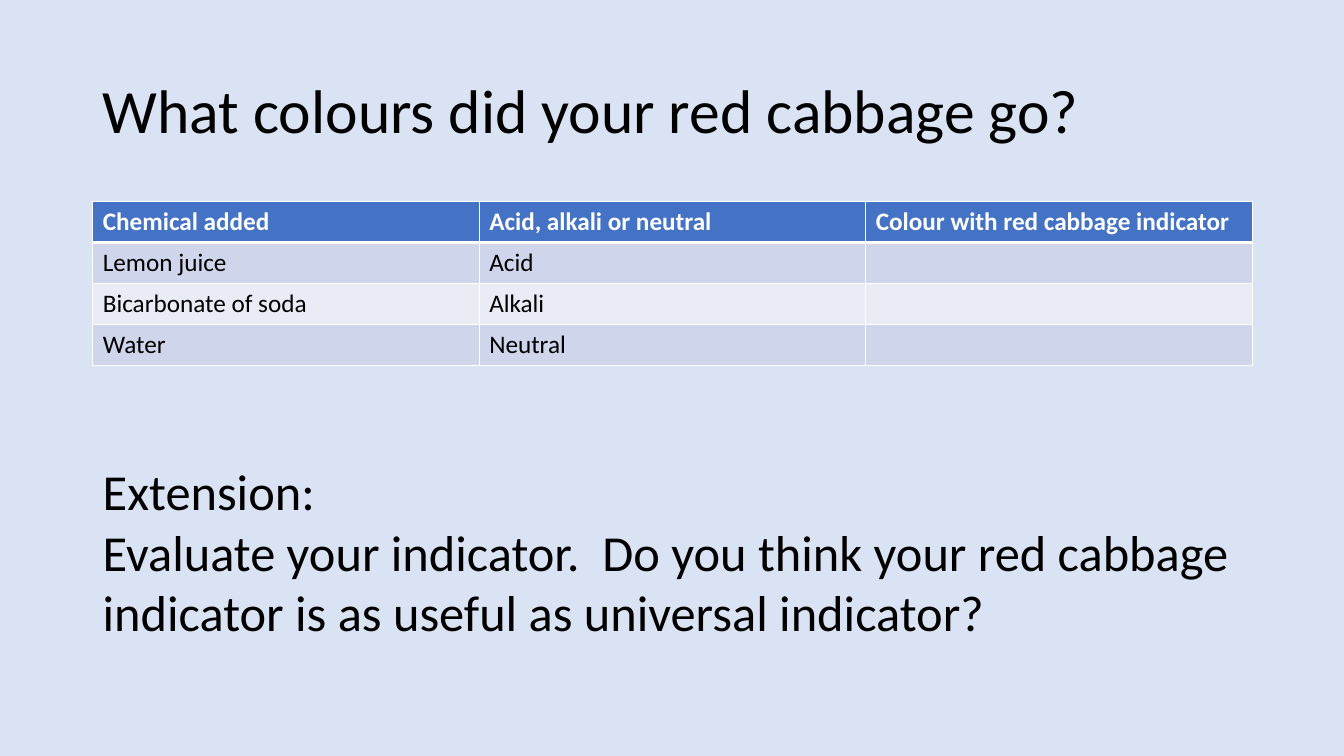
from dataclasses import dataclass

import pptx
import pptx.dml.color
import pptx.enum.text
import pptx.oxml
import pptx.oxml.ns
import pptx.util
from pptx.util import Inches


@dataclass(frozen=True)
class Theme:
    font: str = "Calibri"
    background: str = "DAE3F3"
    text: str = "000000"
    header_text: str = "FFFFFF"
    header_fill: str = "4472C4"
    bands: tuple = ("CFD5EA", "E9EBF5")
    border: str = "FFFFFF"
    title_size: int = 44
    body_size: int = 36
    table_size: int = 18


theme = Theme()


def write(para, text, *, size, color=theme.text, bold=False):
    span = para.add_run()
    span.text = text
    span.font.name = theme.font
    span.font.size = pptx.util.Pt(size)
    span.font.bold = bold
    span.font.color.rgb = pptx.dml.color.RGBColor.from_string(color)


def set_border(cell, side, points):
    """Draw one side of a cell: L, R, T or B. Call in that order, before the fill."""
    cell._tc.get_or_add_tcPr().append(pptx.oxml.parse_xml(
        f'<a:ln{side} {pptx.oxml.ns.nsdecls("a")} w="{pptx.util.Pt(points)}">'
        f'<a:solidFill><a:srgbClr val="{theme.border}"/></a:solidFill></a:ln{side}>'
    ))


deck = pptx.Presentation()
deck.slide_width = Inches(13.33)
deck.slide_height = Inches(7.5)
page = deck.slides.add_slide(deck.slide_layouts[5])
page.background.fill.solid()
page.background.fill.fore_color.rgb = pptx.dml.color.RGBColor.from_string(theme.background)

left, width = Inches(0.92), Inches(11.5)

# Title
title = page.shapes.title
title.left, title.top, title.width, title.height = left, Inches(0.4), width, Inches(1.45)
title.text_frame.vertical_anchor = pptx.enum.text.MSO_ANCHOR.MIDDLE
title.text_frame.auto_size = pptx.enum.text.MSO_AUTO_SIZE.NONE
title_para = title.text_frame.paragraphs[0]
title_para.alignment = pptx.enum.text.PP_ALIGN.LEFT
title_para.line_spacing = 0.9
write(title_para, "What colours did your red cabbage go?", size=theme.title_size)

# Results table
results = [
    ("Chemical added", "Acid, alkali or neutral", "Colour with red cabbage indicator"),
    ("Lemon juice", "Acid", ""),
    ("Bicarbonate of soda", "Alkali", ""),
    ("Water", "Neutral", ""),
]
table = page.shapes.add_table(
    len(results), len(results[0]), left, Inches(2), width, Inches(1.62)
).table
for row_index, row in enumerate(results):
    is_header = row_index == 0
    fill = theme.header_fill if is_header else theme.bands[(row_index - 1) % 2]
    for column_index, text in enumerate(row):
        cell = table.cell(row_index, column_index)
        for side in "LRTB":
            thick = (is_header and side == "B") or (row_index == 1 and side == "T")
            set_border(cell, side, 3 if thick else 1)
        cell.fill.solid()
        cell.fill.fore_color.rgb = pptx.dml.color.RGBColor.from_string(fill)
        if text:
            write(cell.text_frame.paragraphs[0], text, size=theme.table_size, bold=is_header,
                  color=theme.header_text if is_header else theme.text)

# Extension task
extension = page.shapes.add_textbox(left, Inches(4.52), Inches(11.41), Inches(2.83))
frame = extension.text_frame
frame.word_wrap = True
frame.auto_size = pptx.enum.text.MSO_AUTO_SIZE.SHAPE_TO_FIT_TEXT
write(frame.paragraphs[0], "Extension:", size=theme.body_size)
write(
    frame.add_paragraph(),
    "Evaluate your indicator.  Do you think your red cabbage indicator"
    " is as useful as universal indicator?",
    size=theme.body_size,
)

deck.save("out.pptx")
